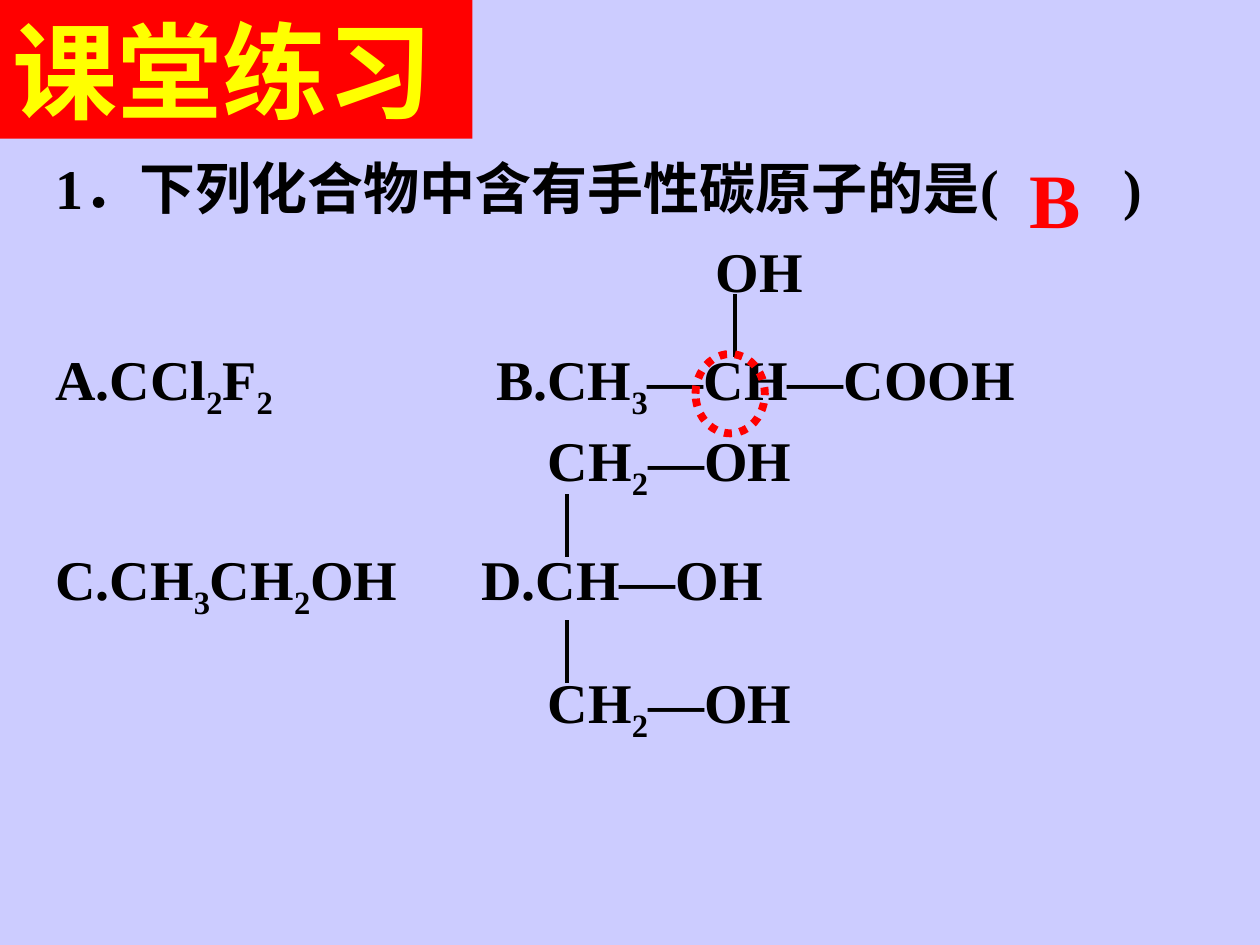
from dataclasses import dataclass
from lxml import etree
from pptx import Presentation
from pptx.dml import color
from pptx.enum import dml, shapes, text
from pptx.oxml import ns
from pptx.util import Inches, Pt


@dataclass
class Theme:
    back = color.RGBColor(0xCC, 0xCC, 0xFF)
    ink = color.RGBColor(0, 0, 0)
    red = color.RGBColor(0xFF, 0, 0)
    gold = color.RGBColor(0xFF, 0xFF, 0)
    serif = "Times New Roman"
    sans = "Arial"
    body = 32
    answer = 44
    title = 60


theme = Theme()


def write(para, parts, size=theme.body, ink=theme.ink, face=theme.serif):
    for index, part in enumerate(parts):
        run = para.add_run()
        run.text = part
        run.font.name = face
        run.font.size = Pt(size)
        run.font.bold = True
        run.font.color.rgb = ink
        if index % 2:
            run.font._element.set("baseline", "-25000")


def frame(left, top, width, height):
    box = items.add_textbox(Inches(left), Inches(top), Inches(width), Inches(height))
    box.text_frame.word_wrap = True
    return box.text_frame


deck = Presentation()
deck.slide_width, deck.slide_height = Inches(10), Inches(7.5)
slide = deck.slides.add_slide(deck.slide_layouts[6])
slide.background.fill.solid()
slide.background.fill.fore_color.rgb = theme.back
items = slide.shapes

rows = [
    (["1．下列化合物中含有手性碳原子的是(\t)"], 8.48, 0),
    (["A.CCl", "2", "F", "2", "\tB.CH", "3", "—CH—COOH"], 3.5, 70.5),
    (["C.CH", "3", "CH", "2", "OH\tD.CH—OH"], 3.38, 70.5),
]
quiz = frame(0.34, 1.17, 9, 4.64)
for index, (parts, stop, gap) in enumerate(rows):
    para = quiz.add_paragraph() if index else quiz.paragraphs[0]
    para.space_before = Pt(gap)
    tabs = etree.SubElement(para._p.get_or_add_pPr(), ns.qn("a:tabLst"))
    etree.SubElement(tabs, ns.qn("a:tab"), pos=str(Inches(stop)), algn="l")
    write(para, parts)

for left, top in [(5.83, 2.33), (4.5, 4.92), (4.5, 3.92)]:
    bond = items.add_connector(
        shapes.MSO_CONNECTOR.STRAIGHT,
        Inches(left), Inches(top + 0.5), Inches(left), Inches(top))
    bond.line.color.rgb = theme.ink
    bond.line.width = Pt(2.25)
    etree.SubElement(bond._element.spPr, ns.qn("a:effectLst"))

alcohol = ["CH", "2", "—OH"]
for left, top, parts in [(4.25, 3.33, alcohol), (4.25, 5.25, alcohol), (5.58, 1.83, ["OH"])]:
    group = frame(left, top, 2.42, 0.63)
    write(group.paragraphs[0], parts)

ring = items.add_shape(
    shapes.MSO_SHAPE.OVAL, Inches(5.52), Inches(2.81), Inches(0.55), Inches(0.63))
ring.shadow.inherit = False
ring.fill.background()
ring.line.color.rgb = theme.red
ring.line.width = Pt(4.5)
ring.line.dash_style = dml.MSO_LINE.ROUND_DOT

answer = frame(8.07, 1.15, 0.71, 0.83)
write(answer.paragraphs[0], ["B"], theme.answer, theme.red)

banner = items.add_shape(
    shapes.MSO_SHAPE.RECTANGLE, Inches(0), Inches(0), Inches(3.75), Inches(1.1))
banner.shadow.inherit = False
banner.fill.solid()
banner.fill.fore_color.rgb = theme.red
banner.line.fill.background()
title = banner.text_frame
title.word_wrap = True
title.vertical_anchor = text.MSO_ANCHOR.MIDDLE
title.paragraphs[0].alignment = text.PP_ALIGN.LEFT
write(title.paragraphs[0], ["课堂练习"], theme.title, theme.gold, theme.sans)

deck.save("out.pptx")
